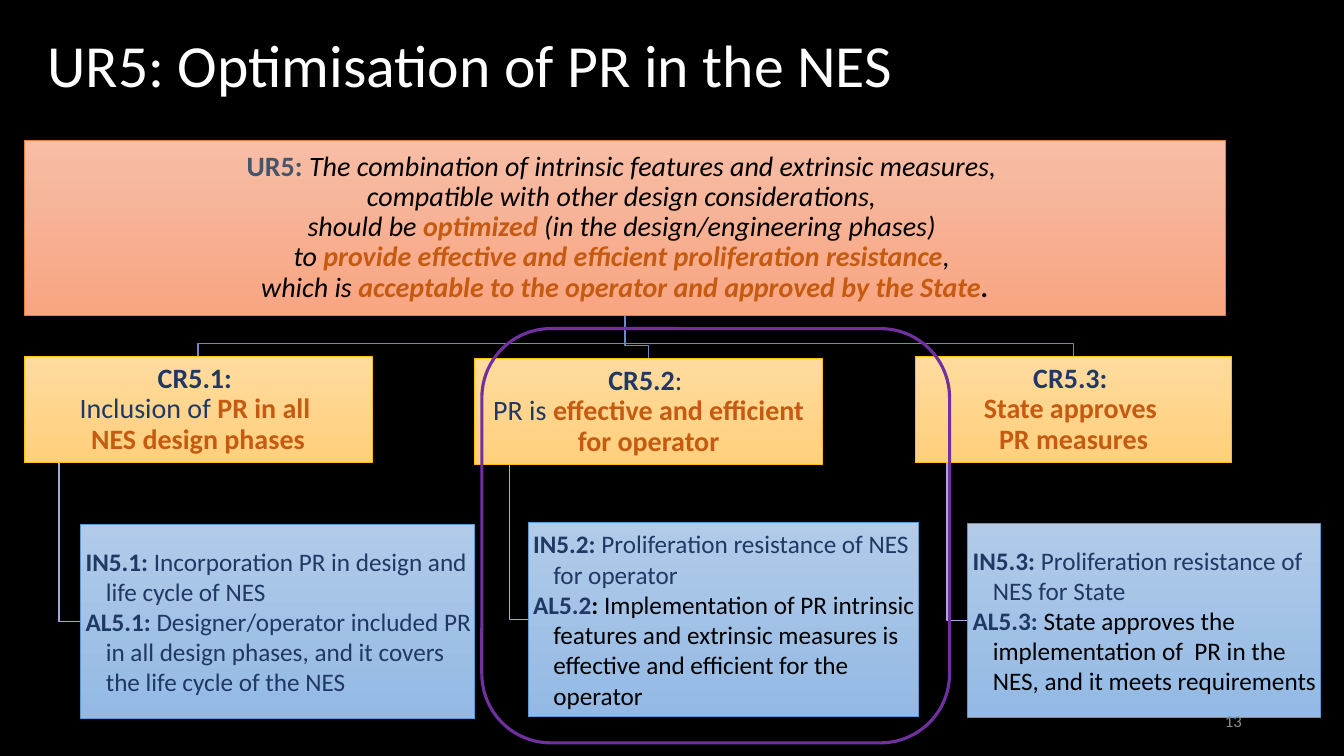
"""Build the slide on optimising proliferation resistance (UR5)."""
from dataclasses import dataclass

import pptx
import pptx.dml.color
import pptx.enum.shapes
import pptx.enum.text
import pptx.util

Pt = pptx.util.Pt
RGB = pptx.dml.color.RGBColor.from_string
SHAPES = pptx.enum.shapes.MSO_SHAPE
ALIGN = pptx.enum.text.PP_ALIGN
MIDDLE = pptx.enum.text.MSO_ANCHOR.MIDDLE
FIXED = pptx.enum.text.MSO_AUTO_SIZE.NONE


@dataclass(frozen=True)
class Theme:
    """Colours, emphasis and type sizes of the slide."""
    font = "Calibri"
    background = "000000"
    title_size, requirement_size, indicator_size, number_size = 42.7, 20, 18, 12
    requirement = ("F7BDA5", "F8A582", "ED7D31")
    criterion = ("FFDB9E", "FFD07C", "FFC000")
    indicator = ("B1CBE9", "93B9E4", "5B9BD5")
    trunk, branch, highlight = "6D89CB", "9EADD8", "7030A0"
    voices = {
        "title": ("FFFFFF", False, False),
        "number": ("8C8C8C", False, False),
        "heading": ("44546A", True, False),
        "quote": ("000000", False, True),
        "quote key": ("C55A11", True, True),
        "quote end": ("000000", True, True),
        "label": ("203864", True, False),
        "plain": ("203864", False, False),
        "key": ("C55A11", True, False),
        "black label": ("000000", True, False),
        "black": ("000000", False, False),
    }


THEME = Theme()

REQUIREMENT = [
    ("UR5: ", "heading"),
    ("The combination of intrinsic features and extrinsic measures, \n"
     "compatible with other design considerations, \nshould be ", "quote"),
    ("optimized", "quote key"),
    (" (in the design/engineering phases) \nto ", "quote"),
    ("provide effective and efficient proliferation resistance", "quote key"),
    (", \nwhich is ", "quote"),
    ("acceptable to the operator and approved by the State", "quote key"),
    (".", "quote end"),
]

BRANCHES = [
    ((17.3, 254.9, 248.4, 75.6),
     [("CR5.1: \n", "label"), ("Inclusion of ", "plain"),
      ("PR in all \nNES design phases", "key")],
     (57.6, 374.4, 281.5, 139),
     [[("IN5.1: ", "label"),
       ("Incorporation PR in design and life cycle of NES", "plain")],
      [("AL5.1: ", "label"),
       ("Designer/operator included PR in all design phases, "
        "and it covers the life cycle of the NES", "plain")]]),
    ((339.1, 256.3, 248.4, 75.6),
     [("CR5.2", "label"), (": \nPR is ", "plain"),
      ("effective and efficient for operator", "key")],
     (377.3, 373, 278.6, 139),
     [[("IN5.2: ", "label"),
       ("Proliferation resistance of NES for operator", "plain")],
      [("AL5.2", "label"), (": ", "black label"),
       ("Implementation of PR intrinsic features and extrinsic measures "
        "is effective and efficient for the operator", "black")]]),
    ((653.8, 254.9, 226.1, 75.6),
     [("CR5.3: \n", "label"), ("State approves \nPR measures", "key")],
     (691.2, 373.7, 252, 139),
     [[("IN5.3: ", "label"),
       ("Proliferation resistance of NES for State", "plain")],
      [("AL5.3: ", "label"),
       ("State approves the implementation of  PR in the NES, "
        "and it meets requirements", "black")]]),
]


def apply_format(target, values):
    """Set each named attribute on the target."""
    for attribute, value in values.items():
        setattr(target, attribute, value)


def write(frame, passages, size, layout, margin=None, hanging=False):
    """Fill a text frame with paragraphs of voiced passages."""
    apply_format(frame, {"word_wrap": True, "auto_size": FIXED, "vertical_anchor": MIDDLE})
    if margin is not None:
        apply_format(frame, {f"margin_{side}": Pt(margin)
                             for side in ("left", "top", "right", "bottom")})
    for index, passage in enumerate(passages):
        paragraph = frame.paragraphs[0] if index == 0 else frame.add_paragraph()
        apply_format(paragraph, layout)
        if hanging:
            indents = paragraph._p.get_or_add_pPr()
            indents.set("marL", str(Pt(17.3)))
            indents.set("indent", str(Pt(-14.4)))
        for words, voice in passage:
            colour, bold, italic = THEME.voices[voice]
            for position, line in enumerate(words.split("\n")):
                if position:
                    paragraph.add_line_break()
                if line:
                    run = paragraph.add_run()
                    run.text = line
                    apply_format(run.font, {"name": THEME.font, "size": Pt(size),
                                            "bold": bold, "italic": italic})
                    run.font.color.rgb = RGB(colour)


def outline(shape, colour, width):
    """Give a shape a plain line and no shadow."""
    shape.shadow.inherit = False
    shape.line.color.rgb = RGB(colour)
    shape.line.width = Pt(width)


def add_panel(slide, box, colours, passages, size, layout, hanging=False):
    """Add a gradient box with text."""
    top_colour, bottom_colour, edge = colours
    panel = slide.shapes.add_shape(SHAPES.RECTANGLE, *map(Pt, box))
    outline(panel, edge, 0.5)
    panel.fill.gradient()
    panel.fill.gradient_angle = 270
    for stop, colour in zip(panel.fill.gradient_stops, (top_colour, bottom_colour)):
        stop.color.rgb = RGB(colour)
    write(panel.text_frame, passages, size, layout, 0.7, hanging)


def add_link(slide, points, colour):
    """Add an open right-angled line through the points."""
    start, *rest = [(Pt(x), Pt(y)) for x, y in points]
    builder = slide.shapes.build_freeform(*start)
    builder.add_line_segments(rest, close=False)
    link = builder.convert_to_shape()
    link.fill.background()
    outline(link, colour, 1)


def add_branch_links(slide, root, criterion, indicator):
    """Link the requirement to a criterion and the criterion to its indicator."""
    left, top, width, height = criterion
    centre, bend = left + width / 2, top - 9.4
    add_link(slide, [root, (root[0], bend), (centre, bend), (centre, top)], THEME.trunk)
    drop, level = left + width / 10, indicator[1] + indicator[3] / 2
    add_link(slide, [(drop, top + height), (drop, level), (indicator[0], level)], THEME.branch)


def main():
    """Build and save the slide."""
    deck = pptx.Presentation()
    apply_format(deck, {"slide_width": Pt(960), "slide_height": Pt(540)})
    slide = deck.slides.add_slide(deck.slide_layouts[5])
    slide.background.fill.solid()
    slide.background.fill.fore_color.rgb = RGB(THEME.background)

    title = slide.shapes.title
    apply_format(title, {"left": Pt(26.6), "top": Pt(9.4), "width": Pt(916.6), "height": Pt(79.2)})
    write(title.text_frame, [[("UR5: Optimisation of PR in the NES", "title")]],
          THEME.title_size, {"alignment": ALIGN.LEFT, "line_spacing": 0.9})

    centred = {"alignment": ALIGN.CENTER, "line_spacing": 0.9}
    listed = {"alignment": ALIGN.LEFT}
    for criterion, _, indicator, _ in BRANCHES:
        add_branch_links(slide, (446.4, 225.2), criterion, indicator)
    add_panel(slide, (17.3, 100.1, 858.2, 124.9), THEME.requirement, [REQUIREMENT],
              THEME.requirement_size, centred)
    for criterion, statement, indicator, measures in BRANCHES:
        add_panel(slide, criterion, THEME.criterion, [statement],
                  THEME.requirement_size, centred)
        add_panel(slide, indicator, THEME.indicator, measures,
                  THEME.indicator_size, listed, hanging=True)

    page_number = slide.shapes.add_textbox(*map(Pt, (678.2, 500.4, 216, 28.8)))
    write(page_number.text_frame, [[("13", "number")]], THEME.number_size,
          {"alignment": ALIGN.RIGHT})

    operator_focus = slide.shapes.add_shape(
        SHAPES.ROUNDED_RECTANGLE, *map(Pt, (344.2, 234.7, 334.1, 295.9)))
    operator_focus.fill.background()
    outline(operator_focus, THEME.highlight, 2.25)

    deck.save("out.pptx")


if __name__ == "__main__":
    main()
